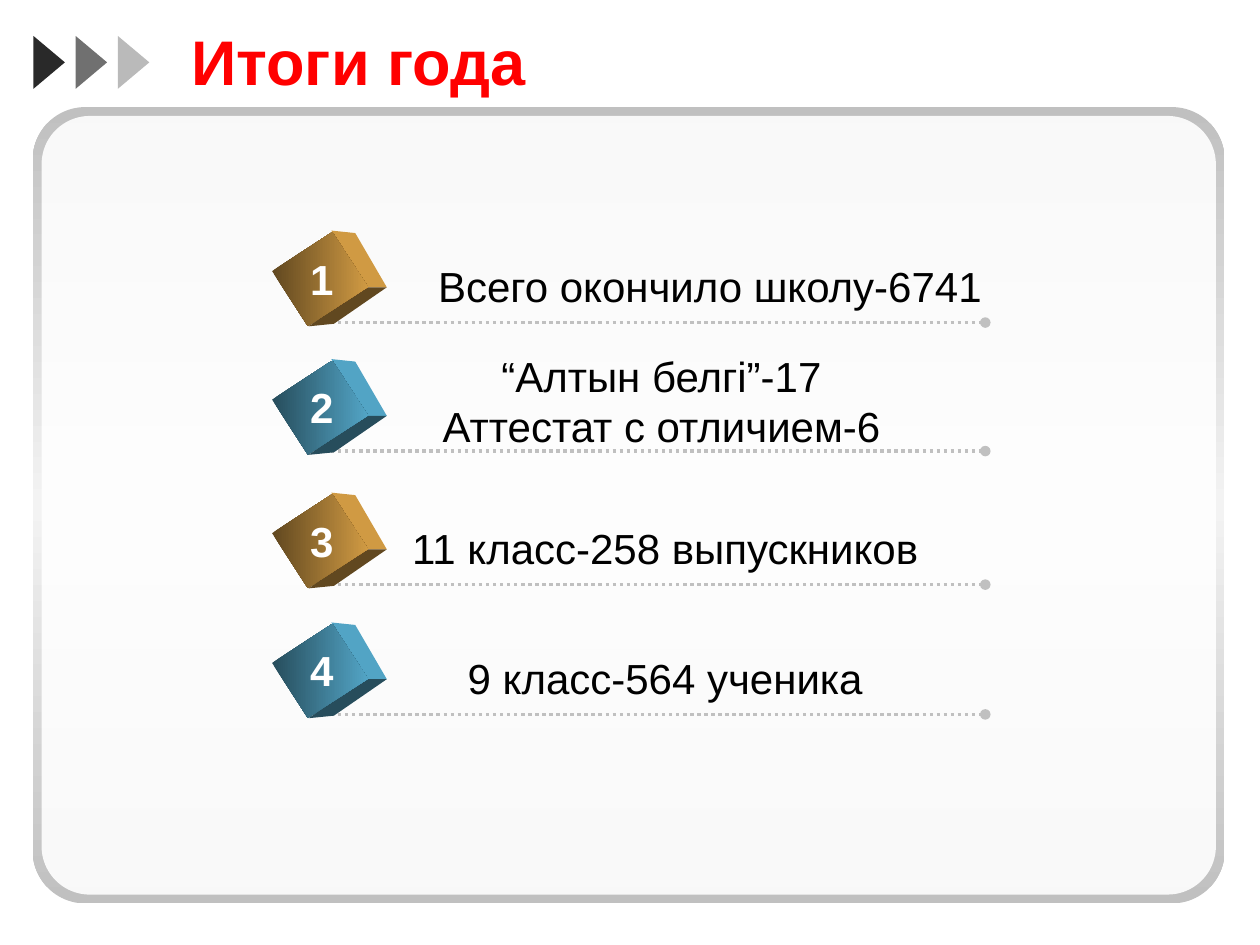
import pptx
import pptx.util
import pptx.dml.color
import pptx.enum.shapes
import pptx.enum.text
import pptx.enum.dml
import pptx.oxml
import pptx.oxml.ns

Inches = pptx.util.Inches
RGBColor = pptx.dml.color.RGBColor
Shape = pptx.enum.shapes.MSO_SHAPE
Align = pptx.enum.text.PP_ALIGN
Anchor = pptx.enum.text.MSO_ANCHOR
qn = pptx.oxml.ns.qn
NS = 'xmlns:a="http://schemas.openxmlformats.org/drawingml/2006/main"'

WHITE = RGBColor(0xFF, 0xFF, 0xFF)
BLACK = RGBColor(0, 0, 0)
RED = RGBColor(0xFF, 0, 0)
GREY = RGBColor(0xC0, 0xC0, 0xC0)
PALE = RGBColor(0xF3, 0xF3, 0xF3)
# Cube shades: dark end of the front, light end and side, base
GOLD = (RGBColor(0x61, 0x48, 0x20), RGBColor(0xD0, 0x9A, 0x43), RGBColor(0x61, 0x48, 0x20))
BLUE = (RGBColor(0x27, 0x4D, 0x5C), RGBColor(0x52, 0xA4, 0xC5), RGBColor(0x27, 0x4D, 0x5C))


def add_text(slide, text, x, y, w, h, size=24, color=BLACK, bold=False,
             align=Align.CENTER, anchor=Anchor.TOP, wrap=True, shadow=False):
    box = slide.shapes.add_textbox(Inches(x), Inches(y), Inches(w), Inches(h))
    frame = box.text_frame
    frame.word_wrap = wrap
    frame.vertical_anchor = anchor
    frame.text = text
    for par in frame.paragraphs:
        par.alignment = align
        for run in par.runs:
            font = run.font
            font.name, font.size, font.bold = "Arial", pptx.util.Pt(size), bold
            font.color.rgb = color
            if shadow:
                font.fill._xPr.find(qn("a:solidFill")).addnext(pptx.oxml.parse_xml(
                    f'<a:effectLst {NS}><a:outerShdw dist="35921" dir="2700000">'
                    '<a:srgbClr val="808080"/></a:outerShdw></a:effectLst>'))


def add_block(slide, kind, x, y, w, h, color, alpha=100, turn=0):
    block = slide.shapes.add_shape(kind, Inches(x), Inches(y), Inches(w), Inches(h))
    block.rotation = turn
    paint(block, color, alpha)
    return block


def paint(shape, color, alpha=100):
    shape.shadow.inherit = False
    shape.line.fill.background()
    shape.fill.solid()
    shape.fill.fore_color.rgb = color
    if alpha < 100:
        tint = shape._element.spPr.find(qn("a:solidFill"))[0]
        tint.append(pptx.oxml.parse_xml(f'<a:alpha {NS} val="{alpha * 1000}"/>'))


def blend(shape, colors, angle):
    """Spread the colours evenly; the angle runs clockwise."""
    step = 100000 // (len(colors) - 1)
    stops = "".join(f'<a:gs pos="{i * step}"><a:srgbClr val="{c}"/></a:gs>'
                    for i, c in enumerate(colors))
    props = shape._element.spPr
    props.replace(props.find(qn("a:solidFill")), pptx.oxml.parse_xml(
        f'<a:gradFill {NS} rotWithShape="1"><a:gsLst>{stops}</a:gsLst>'
        f'<a:lin ang="{angle * 60000}" scaled="0"/></a:gradFill>'))


def add_face(slide, x, y, points, color):
    spots = [(Inches(x + dx), Inches(y + dy)) for dx, dy in points]
    path = slide.shapes.build_freeform(*spots[0])
    path.add_line_segments(spots[1:])
    paint(path.convert_to_shape(), color)


def add_panel(slide, x, y, w, h):
    rim = add_block(slide, Shape.ROUNDED_RECTANGLE, x, y, w, h, GREY)
    rim.adjustments[0] = 0.066
    blend(rim, (GREY, PALE, GREY), 90)
    edge = 0.07
    face = add_block(slide, Shape.ROUNDED_RECTANGLE, x + edge, y + edge,
                     w - 2 * edge, h - 2 * edge, WHITE, 90)
    face.adjustments[0] = 0.062


def add_header(slide, x, y, w, h):
    # Fading arrows
    for i, alpha in enumerate((84, 56, 27)):
        add_block(slide, Shape.ISOSCELES_TRIANGLE, x + i * 0.335, y + 0.2,
                  0.42, 0.25, BLACK, alpha, turn=90)
    add_text(slide, "Итоги года", x + 1.24, y, w - 1.24, h, size=36, color=RED,
             bold=True, align=Align.LEFT, anchor=Anchor.MIDDLE, shadow=True)


def add_cube(slide, x, y, shades):
    dark, light, base = shades
    add_face(slide, x, y, [(0.44, 0), (0.63, 0.02), (0.88, 0.45), (0.7, 0.45)], light)
    add_face(slide, x, y, [(0.26, 0.76), (0.7, 0.45), (0.88, 0.45), (0.46, 0.74)], base)
    front = add_block(slide, Shape.RECTANGLE, x + 0.09, y + 0.1, 0.52, 0.57, dark, turn=57)
    blend(front, (dark, light), 303)


def add_row(slide, x, y, mark, text, shades, left, wide, rise):
    """One item; y is the height of its dotted rule."""
    rule = slide.shapes.add_connector(pptx.enum.shapes.MSO_CONNECTOR.STRAIGHT,
                                      Inches(x + 0.38), Inches(y),
                                      Inches(x + 5.63), Inches(y))
    rule.line.color.rgb = GREY
    rule.line.width = pptx.util.Pt(2)
    rule.line.dash_style = pptx.enum.dml.MSO_LINE.ROUND_DOT
    rule.line._ln.append(pptx.oxml.parse_xml(f'<a:tailEnd {NS} type="oval"/>'))
    rule._element.spPr.append(pptx.oxml.parse_xml(f'<a:effectLst {NS}/>'))
    add_cube(slide, x, y - 0.73, shades)
    add_text(slide, text, x + left, y - rise, wide, rise - 0.04)
    add_text(slide, mark, x + 0.17, y - 0.6, 0.39, 0.5, color=WHITE,
             bold=True, wrap=False)


def main():
    deck = pptx.Presentation()
    deck.slide_width, deck.slide_height = Inches(10), Inches(7.5)
    slide = deck.slides.add_slide(deck.slide_layouts[6])
    add_panel(slide, 0.26, 0.85, 9.46, 6.32)
    add_header(slide, 0.18, 0.17, 9.57, 0.62)

    # Rule height, text, then left, width and rise of the text
    rows = [
        (2.56, "Всего окончило школу-6741", 0.96, 4.97, 0.54),
        (3.58, "“Алтын белгі”-17\nАттестат с отличием-6", 0.93, 4.26, 0.85),
        (4.64, "11 класс-258 выпускников", 0.96, 4.26, 0.54),
        (5.67, "9 класс-564 ученика", 0.96, 4.26, 0.54),
    ]
    for i, (y, text, left, wide, rise) in enumerate(rows):
        add_row(slide, 2.19, y, str(i + 1), text, (GOLD, BLUE)[i % 2], left, wide, rise)
    deck.save("out.pptx")


if __name__ == "__main__":
    main()
